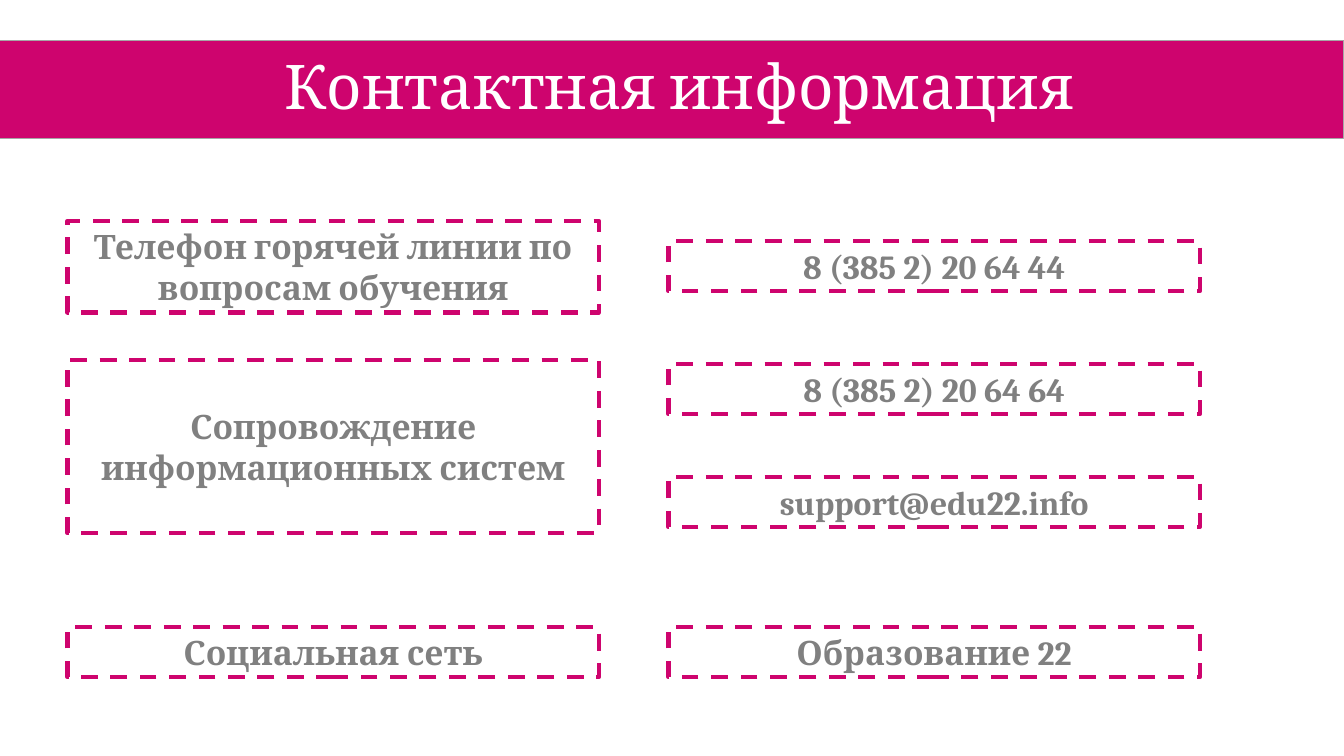
from pptx import Presentation
from pptx.dml.color import RGBColor
from pptx.enum.dml import MSO_LINE
from pptx.enum.shapes import MSO_SHAPE
from pptx.enum.text import MSO_ANCHOR, PP_ALIGN
from pptx.util import Inches, Pt

MAGENTA = RGBColor(0xCE, 0x04, 0x6E)
WHITE = RGBColor(0xFF, 0xFF, 0xFF)
TEXT_GRAY = RGBColor(0x80, 0x80, 0x80)
BORDER_GRAY = RGBColor(0xA6, 0xA6, 0xA6)
RECTANGLE = MSO_SHAPE.RECTANGLE
DASH = MSO_LINE.DASH
MIDDLE = MSO_ANCHOR.MIDDLE
CENTER = PP_ALIGN.CENTER

presentation = Presentation()
presentation.slide_width = Inches(13.33)
presentation.slide_height = Inches(7.5)
slide = presentation.slides.add_slide(presentation.slide_layouts[6])


def add_box(text, left, top, width, height, fill=WHITE, line=MAGENTA,
            line_width=3, dash=DASH, size=24, color=TEXT_GRAY, bold=True):
    shape = slide.shapes.add_shape(
        RECTANGLE, Inches(left), Inches(top), Inches(width), Inches(height))
    shape.shadow.inherit = False
    shape.fill.solid()
    shape.fill.fore_color.rgb = fill
    shape.line.color.rgb = line
    shape.line.width = Pt(line_width)
    shape.line.dash_style = dash
    frame = shape.text_frame
    frame.word_wrap = True
    frame.vertical_anchor = MIDDLE
    paragraph = frame.paragraphs[0]
    paragraph.text = text
    paragraph.alignment = CENTER
    paragraph.font.name = "Cambria"
    paragraph.font.size = Pt(size)
    paragraph.font.bold = bold
    paragraph.font.color.rgb = color
    return shape


# Title band, with its text set slightly right of centre
title = add_box("Контактная информация", 0, 0.4, 13.33, 0.97, fill=MAGENTA,
                line=BORDER_GRAY, line_width=0.75, dash=None, size=44,
                color=WHITE, bold=False)
title.text_frame.margin_left = Inches(0.25)
title.text_frame.paragraphs[0].line_spacing = 0.9

# Two columns: topics on the left, contacts on the right
BOX_WIDTH = 5.27
ROW_HEIGHT = 0.5
topics = [
    ("Телефон горячей линии по вопросам обучения", 2.19, 0.91),
    ("Сопровождение информационных систем", 3.57, 1.72),
    ("Социальная сеть", 6.22, ROW_HEIGHT),
]
contacts = [
    ("8 (385 2) 20 64 44", 2.39, ROW_HEIGHT),
    ("8 (385 2) 20 64 64", 3.61, ROW_HEIGHT),
    ("support@edu22.info", 4.73, ROW_HEIGHT),
    ("Образование 22", 6.22, ROW_HEIGHT),
]
for left, column in ((0.67, topics), (6.63, contacts)):
    for text, top, height in column:
        add_box(text, left, top, BOX_WIDTH, height)

presentation.save("out.pptx")
